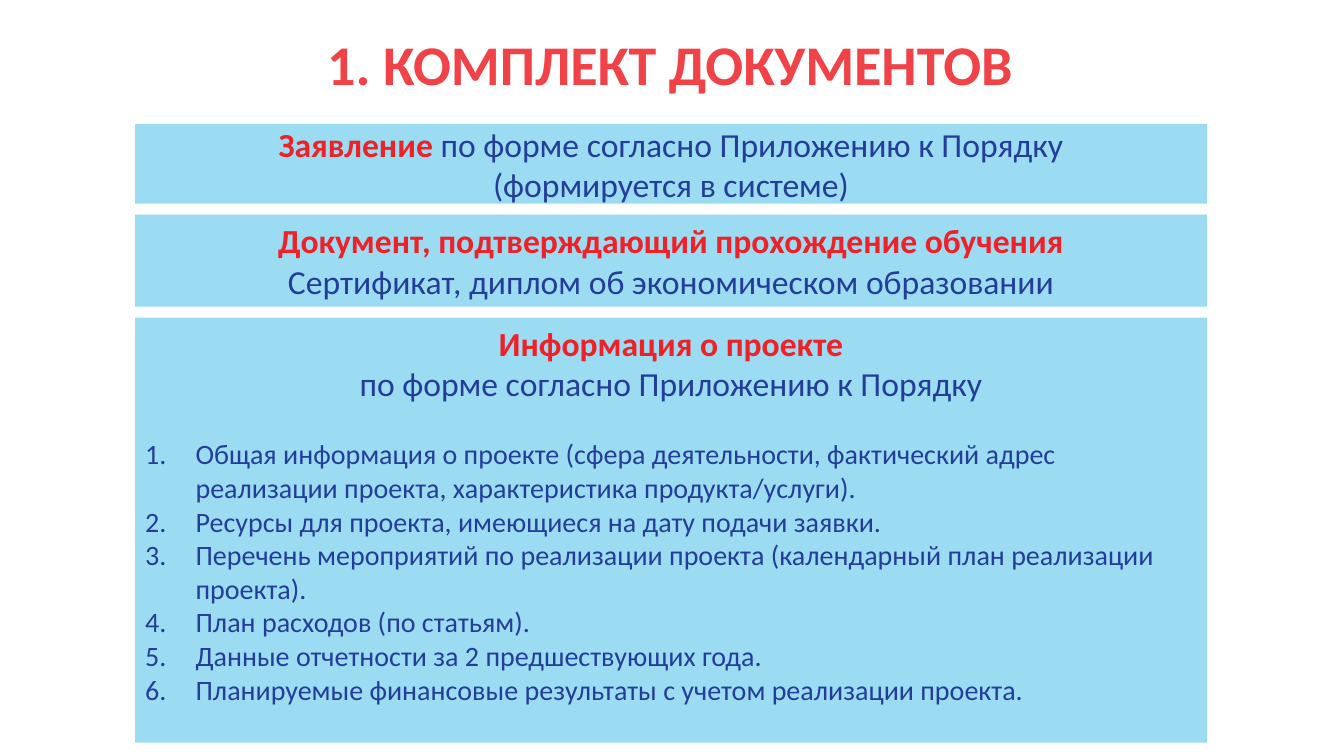
from dataclasses import dataclass

import lxml.etree
import pptx
import pptx.dml.color
import pptx.enum.shapes
import pptx.enum.text
import pptx.oxml.ns
import pptx.util

RGB = pptx.dml.color.RGBColor
CORAL = RGB(0xF0, 0x42, 0x47)
RED = RGB(0xEE, 0x21, 0x28)
NAVY = RGB(0x24, 0x3D, 0x99)
SKY = RGB(0x9B, 0xDC, 0xF3)

ALIGN = pptx.enum.text.PP_ALIGN
ANCHOR = pptx.enum.text.MSO_ANCHOR
FONT = "Calibri"
WIDTH, HEIGHT = pptx.util.Inches(13.33), pptx.util.Inches(7.5)

# Panel grid, in percent of the slide's width or height
LEFT, SPAN = 10.05, 79.75
TOP, GAP = 16.4, 1.45
INDENT = pptx.util.Inches(0.5)


@dataclass(frozen=True)
class Panel:
    tall: float
    lines: tuple  # each line is a tuple of (text, is key) pieces
    items: tuple = ()


PANELS = (
    Panel(10.55, (
        (("Заявление ", True), ("по форме согласно Приложению к Порядку", False)),
        (("(формируется в системе)", False),),
    )),
    Panel(12.15, (
        (("Документ, подтверждающий прохождение обучения", True),),
        (("Сертификат, диплом об экономическом образовании", False),),
    )),
    Panel(56.25, (
        (("Информация о проекте", True),),
        (("по форме согласно Приложению к Порядку", False),),
    ), (
        "Общая информация о проекте (сфера деятельности, фактический адрес "
        "реализации проекта, характеристика продукта/услуги).",
        "Ресурсы для проекта, имеющиеся на дату подачи заявки.",
        "Перечень мероприятий по реализации проекта (календарный план реализации проекта).",
        "План расходов (по статьям).",
        "Данные отчетности за 2 предшествующих года.",
        "Планируемые финансовые результаты с учетом реализации проекта.",
    )),
)


def place(shape, left: float, top: float, wide: float, tall: float) -> None:
    """Put a shape at shares of the slide, in percent."""
    shape.left, shape.width = (round(WIDTH * x / 100) for x in (left, wide))
    shape.top, shape.height = (round(HEIGHT * y / 100) for y in (top, tall))


def write(para, text: str, *, size: float = 24, color: RGB = NAVY, bold: bool = False) -> None:
    """Add one formatted run to a paragraph."""
    run = para.add_run()
    run.text = text
    font = run.font
    font.name, font.size, font.bold = FONT, pptx.util.Pt(size), bold
    font.color.rgb = color


def start(frame, first: bool, *, align: ALIGN, number: bool = False, before: float = 0):
    """Open a paragraph, numbered or plain."""
    para = frame.paragraphs[0] if first else frame.add_paragraph()
    props = para._p.get_or_add_pPr()
    props.set("marL", str(INDENT if number else 0))
    props.set("indent", str(-INDENT if number else 0))
    mark = "a:buAutoNum" if number else "a:buNone"
    bullet = lxml.etree.SubElement(props, pptx.oxml.ns.qn(mark))
    if number:
        bullet.set("type", "arabicPeriod")
    para.alignment = align
    para.space_before = para.space_after = pptx.util.Pt(before if before else 0)
    para.space_after = pptx.util.Pt(0)
    return para


def draw(shape, panel: Panel, top: float) -> None:
    """Fill a panel with its heading lines and its list."""
    place(shape, LEFT, top, SPAN, panel.tall)
    shape.fill.solid()
    shape.fill.fore_color.rgb = SKY
    shape.line.fill.background()
    frame = shape.text_frame
    frame.word_wrap = True
    frame.auto_size = pptx.enum.text.MSO_AUTO_SIZE.NONE
    frame.vertical_anchor = ANCHOR.TOP if panel.items else ANCHOR.MIDDLE
    for row, line in enumerate(panel.lines):
        para = start(frame, row == 0, align=ALIGN.CENTER)
        for text, key in line:
            write(para, text, color=RED if key else NAVY, bold=key)
    for row, item in enumerate(panel.items):
        para = start(frame, False, align=ALIGN.LEFT, number=True,
                     before=24 if row == 0 else 0)
        write(para, item, size=20)


def main() -> None:
    deck = pptx.Presentation()
    deck.slide_width, deck.slide_height = WIDTH, HEIGHT
    slide = deck.slides.add_slide(deck.slide_layouts[1])

    # Title
    title = slide.shapes.title
    place(title, -0.15, -0.8, 100, 19.05)
    title.text_frame.vertical_anchor = ANCHOR.MIDDLE
    para = start(title.text_frame, True, align=ALIGN.CENTER)
    para.line_spacing = 0.96
    write(para, "1. КОМПЛЕКТ ДОКУМЕНТОВ", size=40, color=CORAL, bold=True)

    # Stacked panels; the one with the list is the body placeholder
    top = TOP
    for panel in PANELS:
        if panel.items:
            shape = slide.placeholders[1]
        else:
            shape = slide.shapes.add_shape(
                pptx.enum.shapes.MSO_SHAPE.RECTANGLE, 0, 0, 0, 0)
            shape.shadow.inherit = False
        draw(shape, panel, top)
        top += panel.tall + GAP

    deck.save("out.pptx")


if __name__ == "__main__":
    main()
